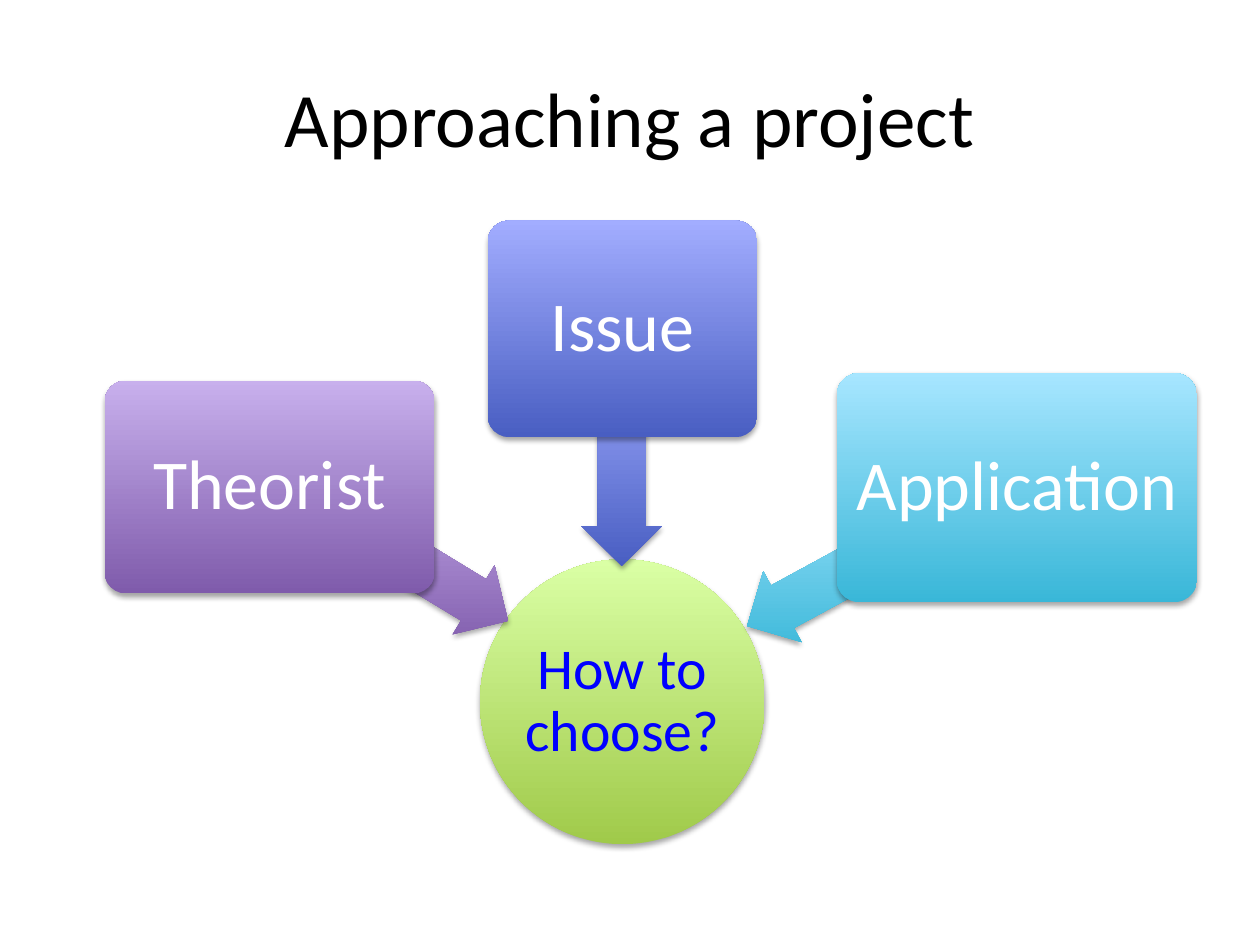
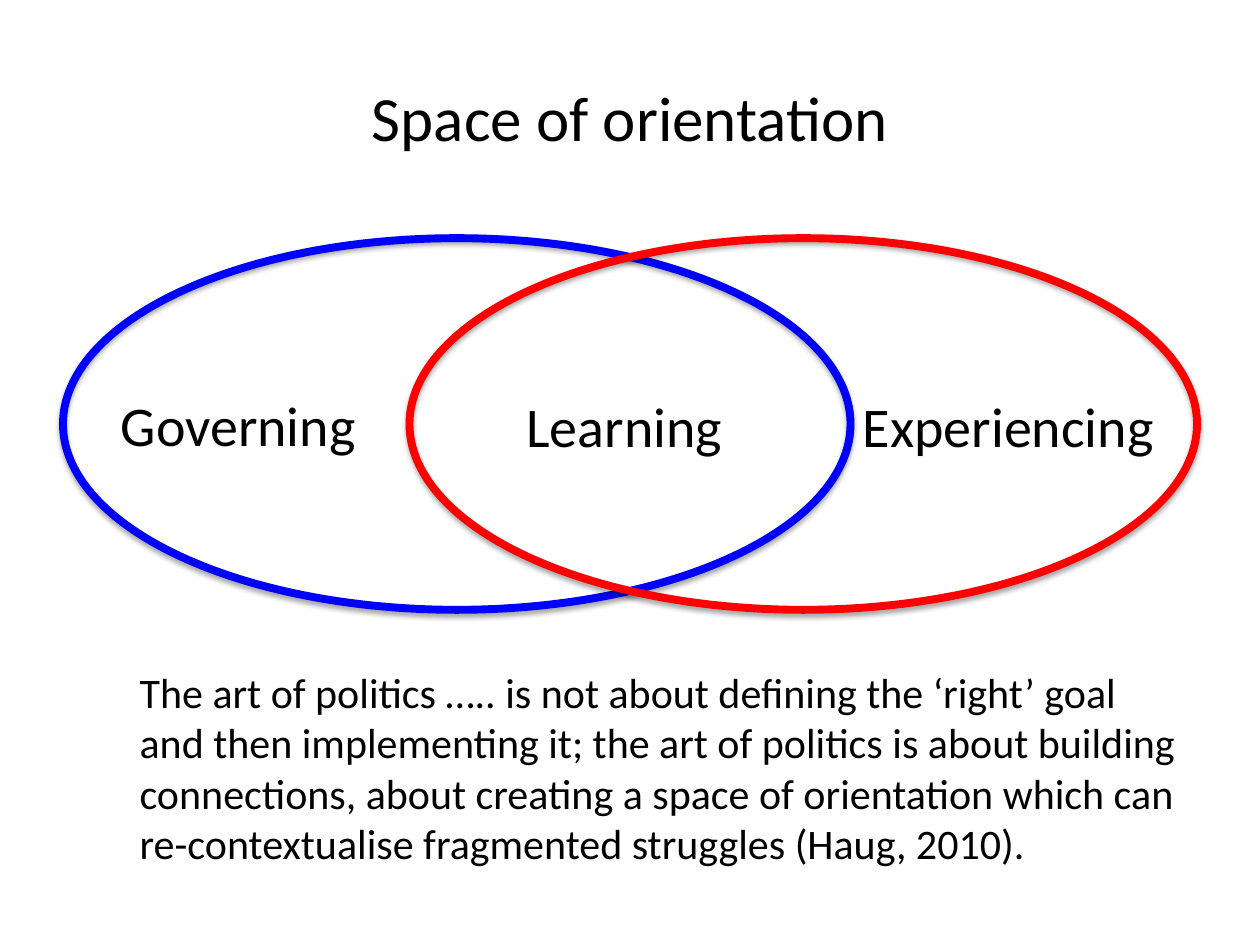
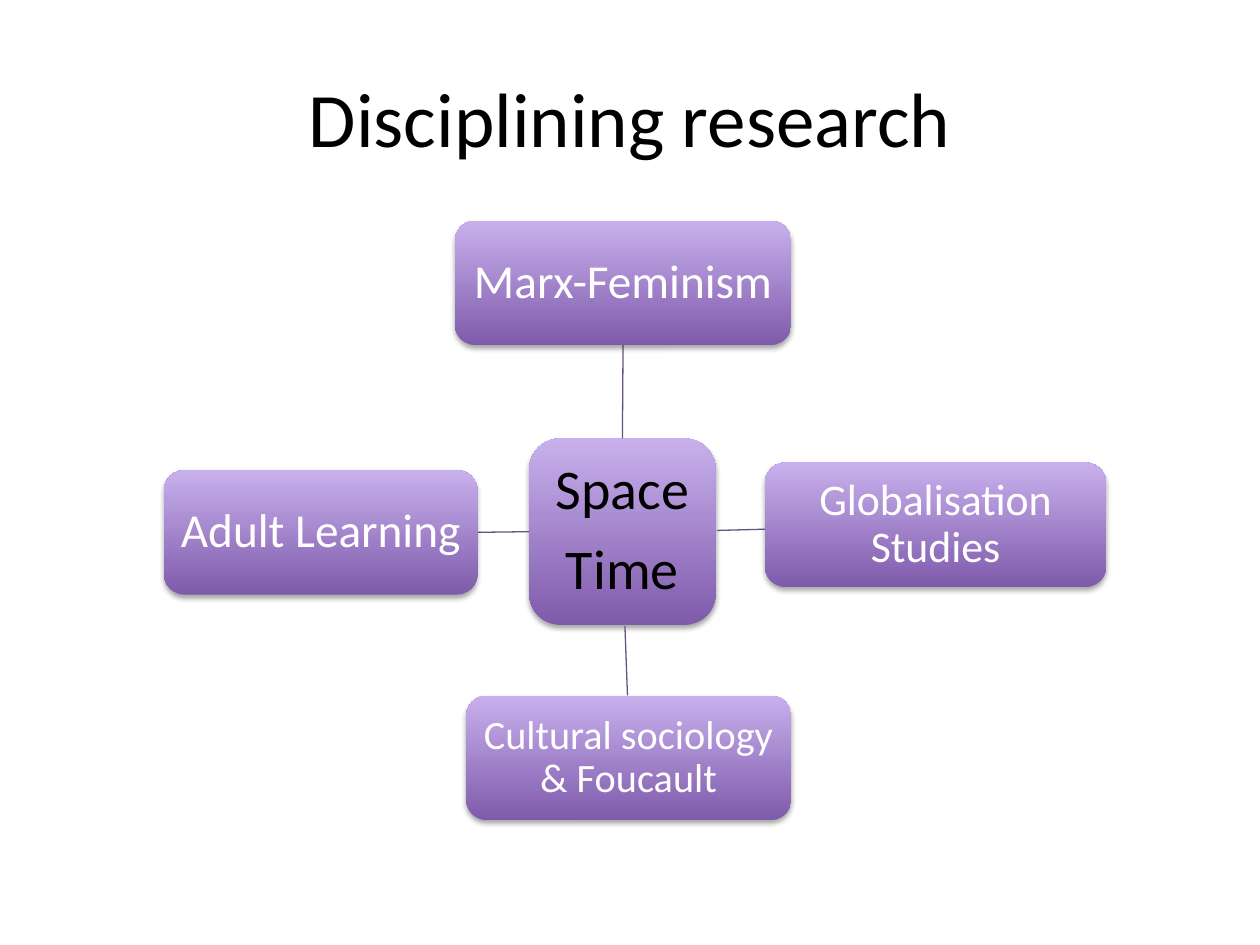
import dataclasses

import lxml.etree
import pptx
import pptx.dml.color
import pptx.enum.shapes
import pptx.enum.text
import pptx.oxml.ns
import pptx.util

Inches = pptx.util.Inches
Pt = pptx.util.Pt
SHAPE = pptx.enum.shapes.MSO_SHAPE
ALIGN = pptx.enum.text.PP_ALIGN
ANCHOR = pptx.enum.text.MSO_ANCHOR
qn = pptx.oxml.ns.qn
TOP, LEFT, BOTTOM, RIGHT = range(4)


@dataclasses.dataclass(frozen=True)
class Theme:
    """Colours, font and type sizes shared by the slides."""
    font: str = "Calibri"
    black: str = "000000"
    white: str = "FFFFFF"
    blue: str = "0000FF"
    red: str = "FF0000"
    link: str = "675082"
    purple: tuple = ("7F5BAB", "C8B0ED")
    indigo: tuple = ("495EC2", "A2ADFF")
    cyan: tuple = ("39B7D8", "A7E6FF")
    green: tuple = ("A0CA4A", "DAFFA5")
    title: int = 44
    small_title: int = 36
    approach: int = 40
    question: int = 33
    label: int = 32
    quote: int = 24


THEME = Theme()


def rgb(value):
    """Turn a hex string into a colour."""
    return pptx.dml.color.RGBColor.from_string(value)


def style(p, size, color, align):
    """Format one paragraph."""
    p.alignment = align
    p.font.name = THEME.font
    p.font.size = Pt(size)
    p.font.color.rgb = rgb(color)


def add_slide(prs, title, size=THEME.title):
    """Add a title-only slide with a centred title."""
    s = prs.slides.add_slide(prs.slide_layouts[5])
    sp = s.shapes.title
    sp.left, sp.top, sp.width, sp.height = map(Inches, (0.5, 0.3, 9, 1.25))
    tf = sp.text_frame
    tf.text = title
    tf.vertical_anchor = ANCHOR.MIDDLE
    style(tf.paragraphs[0], size, THEME.black, ALIGN.CENTER)
    return s


def add_shadow(sp):
    """Give a shape the soft shadow that falls straight down."""
    sp.shadow.inherit = False
    effects = sp._element.spPr.find(qn("a:effectLst"))
    outer = lxml.etree.SubElement(
        effects, qn("a:outerShdw"), blurRad=str(Pt(3.1)), dist=str(Pt(1.8)),
        dir="5400000", rotWithShape="0")
    color = lxml.etree.SubElement(outer, qn("a:srgbClr"), val=THEME.black)
    lxml.etree.SubElement(color, qn("a:alpha"), val="35000")


def add_gradient_shape(s, kind, at, colors, adjust=()):
    """Add a shadowed shape shaded from the bottom colour to the top colour."""
    sp = s.shapes.add_shape(kind, *map(Inches, at))
    for i, value in enumerate(adjust):
        sp.adjustments[i] = value
    sp.fill.gradient()
    sp.fill.gradient_angle = 90
    for stop, color in zip(sp.fill.gradient_stops, colors):
        stop.color.rgb = rgb(color)
    sp._element.spPr.find(qn("a:gradFill")).set("rotWithShape", "0")
    sp.line.fill.background()
    add_shadow(sp)
    return sp


def fill_text(sp, lines, size, color, inset):
    """Write centred lines into a shape."""
    tf = sp.text_frame
    tf.word_wrap = True
    tf.vertical_anchor = ANCHOR.MIDDLE
    tf.margin_left = tf.margin_right = Inches(inset)
    tf.margin_top = tf.margin_bottom = Inches(inset)
    tf.text = "\n".join(lines)
    for p in tf.paragraphs:
        style(p, size, color, ALIGN.CENTER)
        p.line_spacing = 0.9
        p.space_after = Pt(round(0.35 * size))


def add_box(s, at, lines, size, colors=THEME.purple, color=THEME.white,
            inset=0.07, adjust=()):
    """Add a rounded box with centred text."""
    sp = add_gradient_shape(s, SHAPE.ROUNDED_RECTANGLE, at, colors, adjust)
    fill_text(sp, lines, size, color, inset)
    return sp


def add_arrow(s, at, rotation, colors):
    """Add a turned block arrow."""
    sp = add_gradient_shape(s, SHAPE.LEFT_ARROW, at, colors, (0.6, 0.5))
    sp.rotation = rotation


def add_ring(s, at, color):
    """Add an unfilled ellipse with a thick outline."""
    sp = s.shapes.add_shape(SHAPE.OVAL, *map(Inches, at))
    sp.fill.background()
    sp.line.color.rgb = rgb(color)
    sp.line.width = Pt(4.5)
    add_shadow(sp)


def add_text(s, at, text, size):
    """Add a wrapped, left-aligned text box."""
    tf = s.shapes.add_textbox(*map(Inches, at)).text_frame
    tf.word_wrap = True
    tf.text = text
    style(tf.paragraphs[0], size, THEME.black, ALIGN.LEFT)


def add_link(s, ends):
    """Add a thin straight line."""
    line = s.shapes.add_connector(
        pptx.enum.shapes.MSO_CONNECTOR.STRAIGHT, *map(Inches, ends))
    line.line.color.rgb = rgb(THEME.link)
    line.line.width = Pt(0.75)
    lxml.etree.SubElement(line._element.spPr, qn("a:effectLst"))
    return line


def build_approach(prs):
    """Three approaches pointing at one question."""
    s = add_slide(prs, "Approaching a project")
    sp = add_gradient_shape(s, SHAPE.OVAL, (3.81, 4.44, 2.26, 2.26), THEME.green)
    fill_text(sp, ["How to choose?"], THEME.question, THEME.blue, 0.02)
    approaches = [
        ("Theorist", (0.83, 3.02, 2.62, 1.69), (2.15, 4.08, 2.03, 0.64), 211.3, THEME.purple),
        ("Issue", (3.87, 1.75, 2.14, 1.72), (4.07, 3.31, 1.73, 0.64), 270, THEME.indigo),
        ("Application", (6.64, 2.96, 2.86, 1.82), (5.79, 4.1, 2.3, 0.64), 331.5, THEME.cyan),
    ]
    for name, box_at, arrow_at, rotation, colors in approaches:
        add_arrow(s, arrow_at, rotation, colors)
        add_box(s, box_at, [name], THEME.approach, colors, inset=0.08, adjust=(0.1,))


def build_orientation(prs):
    """Two overlapping rings above a quotation."""
    s = add_slide(prs, "Space of orientation", THEME.small_title)
    for left, color in ((0.5, THEME.blue), (3.25, THEME.red)):
        add_ring(s, (left, 1.89, 6.25, 2.95), color)
    for text, left, top, width in (("Governing", 0.86, 3.05, 2.39),
                                   ("Learning", 4.08, 3.06, 2.06),
                                   ("Experiencing", 6.75, 3.06, 2.75)):
        add_text(s, (left, top, width, 0.64), text, THEME.label)
    add_text(s, (1.01, 5.24, 8.49, 2.25),
             "The art of politics ….. is not about defining the ‘right’ goal and then "
             "implementing it; the art of politics is about building connections, about "
             "creating a space of orientation which can re-contextualise fragmented "
             "struggles (Haug, 2010).", THEME.quote)


def build_disciplines(prs):
    """Four disciplines linked to a centre."""
    s = add_slide(prs, "Disciplining research")
    centre = add_box(s, (4.2, 3.48, 1.48, 1.48), ["Space", "Time"], THEME.label,
                     color=THEME.black, inset=0.09)
    disciplines = [
        ("Marx-Feminism", 27, (3.61, 1.75, 2.67), (4.95, 3.48, 4.95, 2.75), (TOP, BOTTOM)),
        ("Globalisation Studies", 25, (6.07, 3.67, 2.71), (5.69, 4.21, 6.07, 4.2), None),
        ("Cultural sociology & Foucault", 23, (3.7, 5.52, 2.58), (4.96, 4.97, 4.98, 5.52), None),
        ("Adult Learning", 27, (1.3, 3.73, 2.49), (4.2, 4.22, 3.79, 4.22), (LEFT, RIGHT)),
    ]
    for name, size, place, ends, sides in disciplines:
        line = add_link(s, ends)
        box = add_box(s, (*place, 0.99), [name], size)
        if sides:
            line.begin_connect(centre, sides[0])
            line.end_connect(box, sides[1])


def main():
    """Build and save the presentation."""
    prs = pptx.Presentation()
    prs.slide_width, prs.slide_height = Inches(10), Inches(7.5)
    build_approach(prs)
    build_orientation(prs)
    build_disciplines(prs)
    prs.save("out.pptx")


if __name__ == "__main__":
    main()
